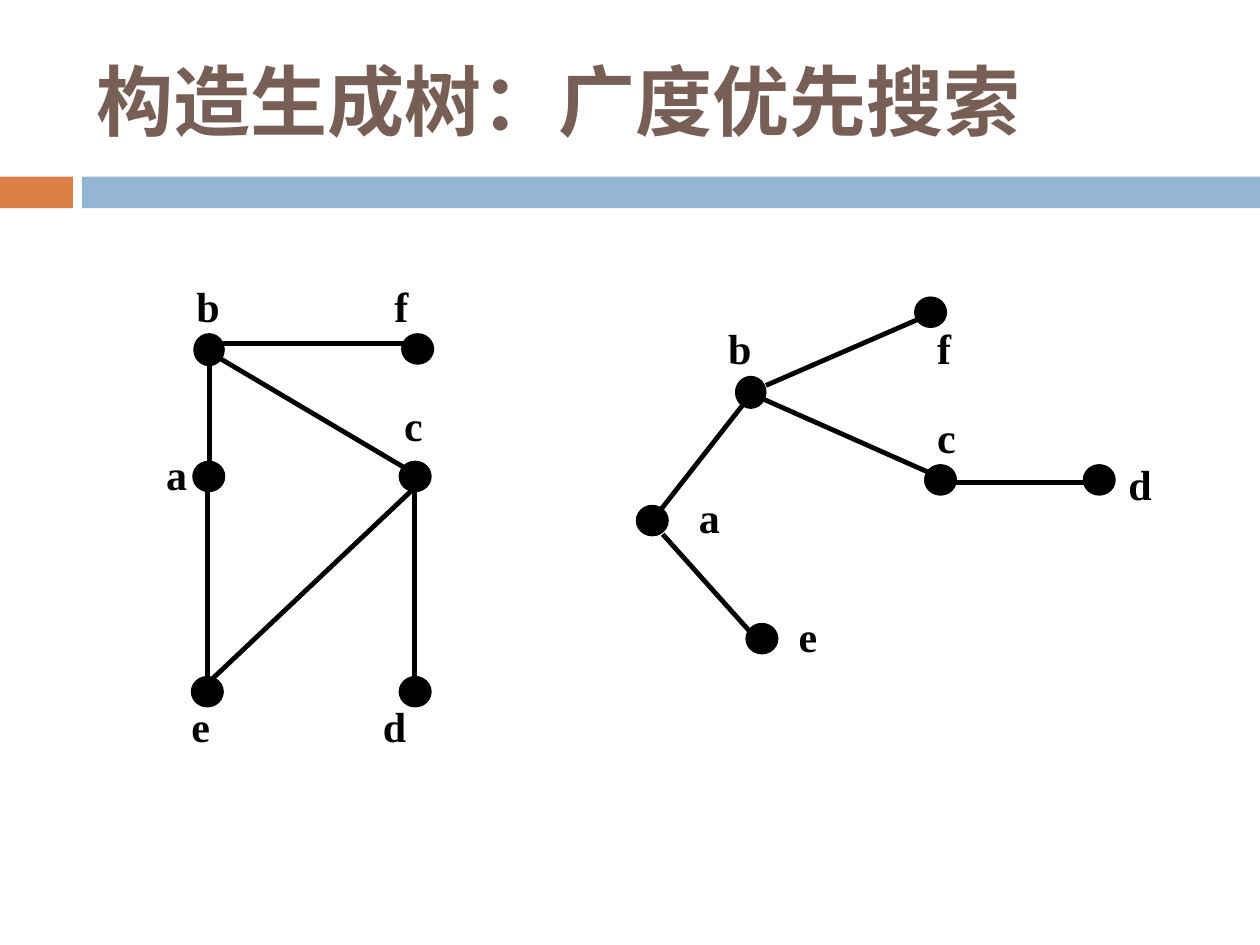
from lxml.etree import SubElement
from pptx import Presentation
from pptx.dml.color import RGBColor as RGB
from pptx.enum.shapes import MSO_CONNECTOR as LINK, MSO_SHAPE as FORM
from pptx.enum.text import MSO_ANCHOR as ANCHOR, PP_ALIGN as ALIGN
from pptx.oxml.ns import qn
from pptx.util import Cm, Pt

INK = {"title": "775F55", "orange": "DD8047", "blue": "94B6D2", "black": "000000"}
HEAD = {"size": Pt(44), "name": "Calibri", "bold": True}
MARK = {"size": Pt(24), "name": "Times New Roman", "bold": True}


def write(frame, text, style, ink):
    frame.word_wrap = True
    par = frame.paragraphs[0]
    par.alignment = ALIGN.LEFT
    run = par.add_run()
    run.text = text
    for key, value in style.items():
        setattr(run.font, key, value)
    run.font.color.rgb = RGB.from_string(INK[ink])


def draw(form, box, ink):
    shape = slide.shapes.add_shape(form, *map(Cm, box))
    shape.shadow.inherit = False
    shape.fill.solid()
    shape.fill.fore_color.rgb = RGB.from_string(INK[ink])
    shape.line.fill.background()
    return shape


deck = Presentation()
deck.slide_width, deck.slide_height = Cm(25.4), Cm(19.05)
slide = deck.slides.add_slide(deck.slide_layouts[5])

draw(FORM.RECTANGLE, (0, 3.56, 1.47, 0.64), "orange")
draw(FORM.RECTANGLE, (1.65, 3.56, 23.75, 0.64), "blue")

title = slide.shapes.title
place = {"left": 1.7, "top": 0.64, "width": 22.66, "height": 2.74}
for key, value in place.items():
    setattr(title, key, Cm(value))
title.text_frame.vertical_anchor = ANCHOR.MIDDLE
write(title.text_frame, "构造生成树：广度优先搜索", HEAD, "title")

edges = [
    (4.22, 9.35, 4.22, 7.32),
    (8.36, 9.83, 4.19, 13.77),
    (8.36, 9.83, 8.36, 13.72),
    (4.19, 9.83, 4.19, 13.72),
    (4.29, 7.14, 8.36, 9.55),
    (8.31, 6.93, 4.5, 6.93),
    (13.23, 10.39, 14.96, 8.18),
    (13.36, 10.77, 15.16, 12.78),
    (19.23, 9.73, 22.05, 9.73),
    (15.24, 7.98, 18.85, 9.58),
    (18.64, 6.38, 15.44, 7.77),
]
for ends in edges:
    edge = slide.shapes.add_connector(LINK.STRAIGHT, *map(Cm, ends))
    edge.line.width = Pt(2.75)
    edge.line.color.rgb = RGB.from_string(INK["black"])
    SubElement(edge.element.spPr, qn("a:effectLst"))

graph = {
    "a": ((3.89, 9.3), (3.1, 8.92)),
    "b": ((3.91, 6.73), (3.71, 5.54)),
    "c": ((8.05, 9.3), (7.9, 7.92)),
    "d": ((8.05, 13.64), (7.47, 14)),
    "e": ((3.86, 13.64), (3.61, 14)),
    "f": ((8.1, 6.73), (7.7, 5.54)),
}
tree = {
    "a": ((12.83, 10.19), (13.84, 9.78)),
    "b": ((14.83, 7.59), (14.43, 6.38)),
    "c": ((18.64, 9.37), (18.64, 8.18)),
    "d": ((21.84, 9.37), (22.5, 9.12)),
    "e": ((15.04, 12.57), (15.85, 12.19)),
    "f": ((18.44, 5.99), (18.64, 6.38)),
}
for nodes in (graph, tree):
    for name, (spot, tag) in nodes.items():
        size = (0.61, 0.64) if name == "b" else (0.64, 0.61)
        dot = draw(FORM.OVAL, spot + size, "black")
        dot.line.color.rgb = RGB.from_string(INK["black"])
        dot.line.width = Pt(0.75)
        wide = 1.3 if name in "cf" else 1.5
        high = 1.27 if name in "bcf" else 1.68
        label = slide.shapes.add_textbox(*map(Cm, tag + (wide, high)))
        write(label.text_frame, name, MARK, "black")

deck.save("out.pptx")
